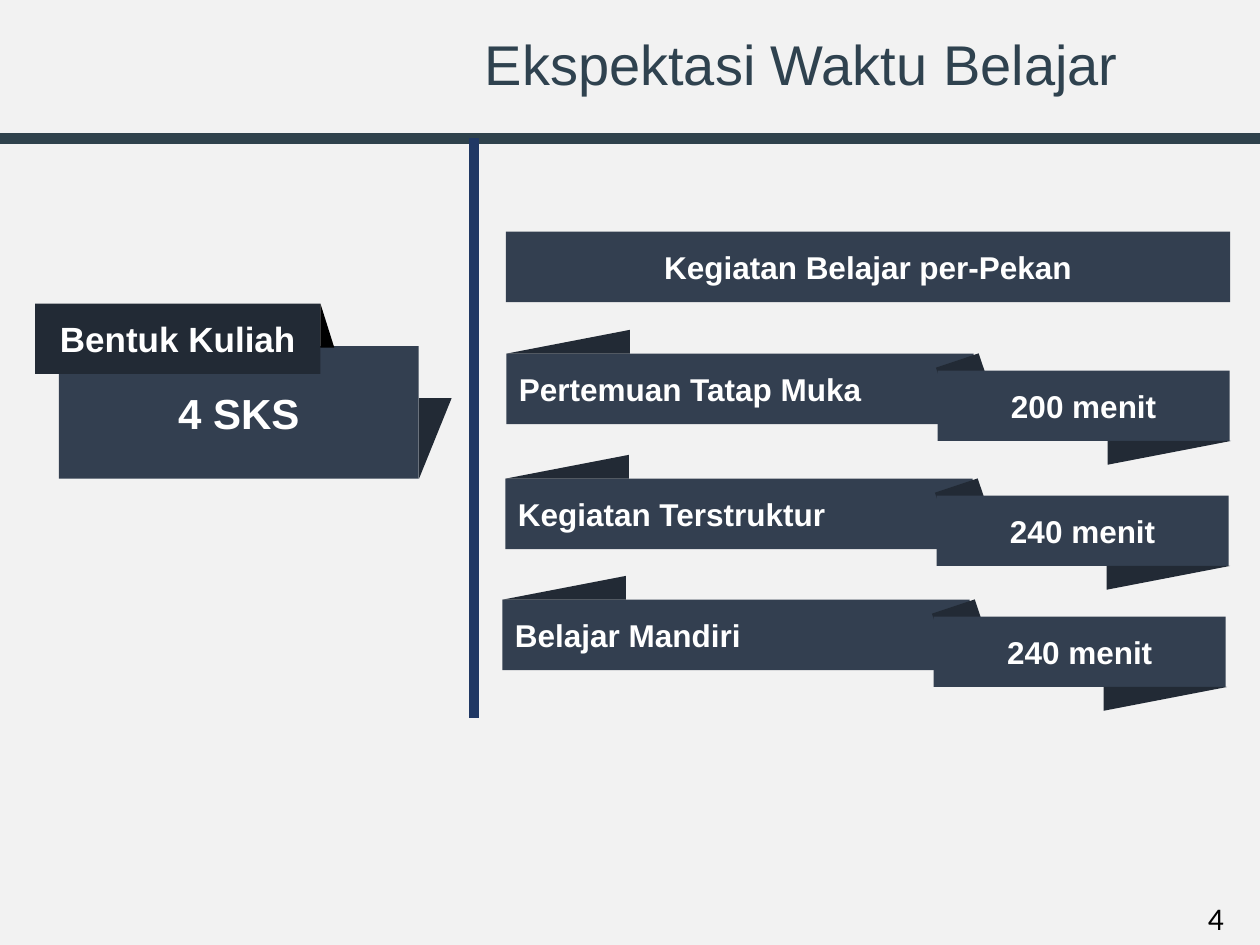
from lxml import etree
from pptx import Presentation, util as u
from pptx.dml.color import RGBColor
from pptx.enum import shapes as s, text as t
from pptx.oxml.ns import qn

HUES = {
    "page": "F2F2F2", "rule": "2F424C", "title": "2F424F", "navy": "203864",
    "slate": "333F50", "dark": "222A35", "black": "000000", "white": "FFFFFF",
}
RECT = s.MSO_SHAPE.RECTANGLE
WEDGE = s.MSO_SHAPE.RIGHT_TRIANGLE
LEFT, MID = t.PP_ALIGN.LEFT, t.PP_ALIGN.CENTER
ROWS = [
    (10.21, 6.65, "Pertemuan Tatap Muka", "200 menit"),
    (10.19, 9.17, "Kegiatan Terstruktur", "240 menit"),
    (10.13, 11.61, "Belajar Mandiri", "240 menit"),
]


def hue(name):
    return RGBColor.from_string(HUES[name])


def lengths(*nums):
    return [u.Cm(n) for n in nums]


def write(frame, words, size, color, font="Arial", align=MID, bold=False):
    frame.text = words
    para = frame.paragraphs[0]
    para.alignment = align
    face = para.runs[0].font
    face.name, face.size, face.bold = font, u.Pt(size), bold
    face.color.rgb = hue(color)
    return para


def block(parts, box, color, kind=RECT, turn=0, flip=None):
    shape = parts.add_shape(kind, *lengths(*box))
    shape.shadow.inherit = False
    shape.fill.solid()
    shape.fill.fore_color.rgb = hue(color)
    shape.line.fill.background()
    shape.rotation = turn
    if flip:
        shape.element.spPr.get_or_add_xfrm().set(flip, "1")
    return shape


def panel(parts, box, color, words, size, align=MID):
    """Add a filled bar with bold white text."""
    frame = block(parts, box, color).text_frame
    frame.word_wrap = True
    frame.vertical_anchor = t.MSO_ANCHOR.MIDDLE
    write(frame, words, size, "white", align=align, bold=True)


def rule(parts, ends, color):
    line = parts.add_connector(s.MSO_CONNECTOR.STRAIGHT, *lengths(*ends))
    line.line.color.rgb = hue(color)
    line.line.width = u.Pt(6)
    etree.SubElement(line.element.spPr, qn("a:effectLst"))


def header(parts, x, y, wide):
    rule(parts, (x, y + 2.79, x + wide, y + 2.79), "rule")
    title = parts.add_textbox(*lengths(x + 8.22, y + 0.6, 15.88, 1.52)).text_frame
    title.word_wrap = True
    title.vertical_anchor = t.MSO_ANCHOR.MIDDLE
    write(title, "Ekspektasi Waktu Belajar", 32, "title").line_spacing = 0.9


def course(parts, x, y):
    """Place the folded card with the course form and its credits."""
    card = parts.add_group_shape().shapes
    panel(card, (x + 0.48, y + 0.86, 7.25, 2.67), "slate", "4 SKS", 24)
    panel(card, (x, y, 5.75, 1.42), "dark", "Bentuk Kuliah", 20)
    block(card, (x + 5.75, y, 0.28, 0.89), "black", WEDGE)
    block(card, (x + 7.25, y + 2.39, 1.63, 0.66), "dark", WEDGE, turn=90)


def ribbon(parts, x, y, task, time):
    """Place one folded ribbon: an activity and its minutes."""
    row = parts.add_group_shape().shapes
    high, fold = 1.42, (2.49, 0.48)
    panel(row, (x, y + 0.48, 9.42, high), "slate", task, 18, LEFT)
    block(row, (x + 8.86, y + 0.58, 0.91, high), "dark", turn=341.5)
    panel(row, (x + 8.69, y + 0.82, 5.89, high), "slate", time, 18)
    block(row, (x, y, *fold), "dark", WEDGE, flip="flipH")
    block(row, (x + 12.12, y + 0.82 + high, *fold), "dark", WEDGE, flip="flipV")


def weekly(parts, x, y):
    panel(parts, (x, y, 14.6, 1.42), "slate", "Kegiatan Belajar per-Pekan", 18)
    for row in ROWS:
        ribbon(parts, *row)


def footer(parts, x, y):
    """Place the page number."""
    frame = parts.add_textbox(*lengths(x, y, 1.27, 1.02)).text_frame
    frame.word_wrap = False
    write(frame, "4", 18, "black", font="Calibri", align=LEFT)


def main():
    deck = Presentation()
    deck.slide_width, deck.slide_height = lengths(25.4, 19.05)
    slide = deck.slides.add_slide(deck.slide_layouts[6])
    slide.background.fill.solid()
    slide.background.fill.fore_color.rgb = hue("page")
    parts = slide.shapes
    header(parts, 0, 0, 25.4)
    rule(parts, (9.56, 2.79, 9.56, 14.48), "navy")
    course(parts, 0.71, 6.12)
    weekly(parts, 10.2, 4.67)
    footer(parts, 24.1, 18)
    deck.save("out.pptx")


if __name__ == "__main__":
    main()
